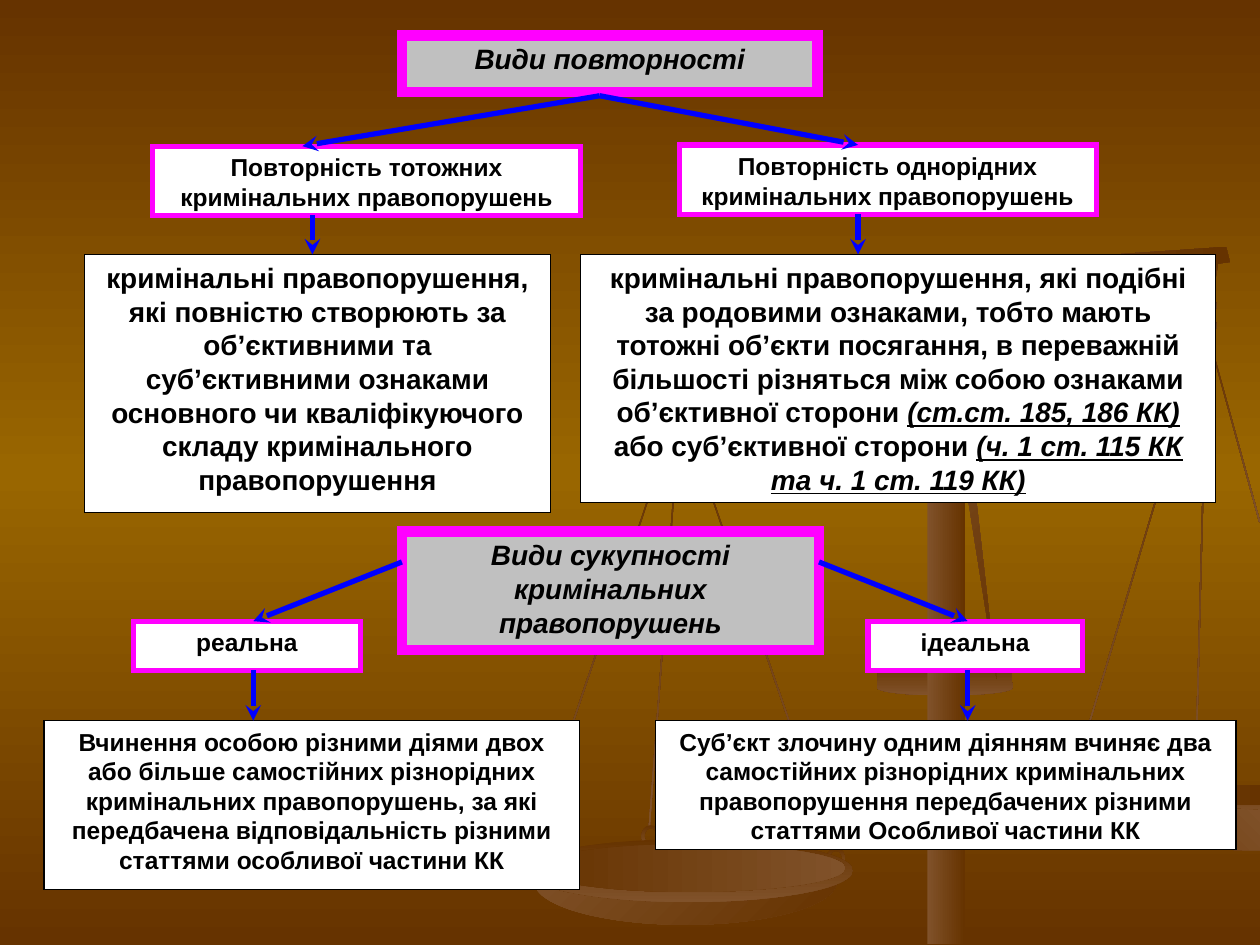
from copy import deepcopy
from dataclasses import dataclass
from math import cos, radians, sin
from lxml.etree import SubElement
from pptx import Presentation
from pptx.dml.color import RGBColor
from pptx.enum.shapes import MSO_CONNECTOR, MSO_SHAPE
from pptx.enum.text import MSO_ANCHOR, PP_ALIGN
from pptx.oxml.ns import qn
from pptx.util import Inches, Pt

BROWN, LIGHT, OCHRE = "663300", "80522A", "996600"
RISING, FALLING = (BROWN, LIGHT), (LIGHT, BROWN)
MAGENTA, BLUE, BLACK, WHITE, GREY = "FF00FF", "0000FF", "000000", "FFFFFF", "C0C0C0"
SLIDE_WIDTH, SLIDE_HEIGHT = 10, 7.5


@dataclass
class Branch:
    kind: str
    kind_place: tuple
    definition: list
    definition_place: tuple
    size: int
    arrow_start: tuple
    arrow_end_x: float
    stem_x: float


HEADINGS = [
    ("Види повторності", (3.19, 0.28, 3.3, 0.45)),
    ("Види сукупності кримінальних правопорушень", (3.19, 4.22, 3.31, 0.94)),
]
BRANCHES = [
    Branch("Повторність тотожних кримінальних правопорушень", (1.21, 1.16, 3.4, 0.55),
           ["кримінальні правопорушення, які повністю створюють за об’єктивними та суб’єктивними "
            "ознаками основного чи кваліфікуючого складу кримінального правопорушення"],
           (0.67, 2.02, 3.7, 2.05), 16, (4.76, 0.76), 2.4, 2.48),
    Branch("Повторність однорідних кримінальних правопорушень", (5.39, 1.15, 3.31, 0.55),
           ["кримінальні правопорушення, які подібні за родовими ознаками, тобто мають тотожні "
            "об’єкти посягання, в переважній більшості різняться між собою ознаками "
            "об’єктивної сторони ", "(ст.ст. 185, 186 КК)", " або суб’єктивної сторони ",
            "(ч. 1 ст. 115 КК та ч. 1 ст. 119 КК)"],
           (4.61, 2.02, 5.04, 1.97), 16, (4.76, 0.76), 6.81, 6.81),
    Branch("реальна", (1.06, 4.93, 1.8, 0.39),
           ["Вчинення особою різними діями двох або більше самостійних різнорідних кримінальних "
            "правопорушень, за які передбачена відповідальність різними статтями особливої "
            "частини КК"],
           (0.35, 5.72, 4.25, 1.34), 14, (3.19, 4.46), 2.01, 2.01),
    Branch("ідеальна", (6.89, 4.93, 1.7, 0.39),
           ["Суб’єкт злочину одним діянням вчиняє два самостійних різнорідних кримінальних "
            "правопорушення передбачених різними статтями Особливої частини КК"],
           (5.2, 5.72, 4.61, 1.02), 14, (6.5, 4.46), 7.68, 7.68),
]


def color(value):
    return RGBColor.from_string(value)


def arc(center_x, center_y, radius_x, radius_y, start, end, steps=16):
    angles = [radians(start + (end - start) * step / steps) for step in range(steps + 1)]
    return [(center_x + radius_x * cos(angle), center_y + radius_y * sin(angle)) for angle in angles]


class SlideBuilder:
    font = "Arial"

    def __init__(self, slide):
        self.slide = slide
        self.scales = None

    def background(self, edge, middle):
        fill = self.slide.background.fill
        fill.gradient()
        fill.gradient_angle = 270
        stop_list = self.slide.element.find(".//" + qn("a:gsLst"))
        stop_list.insert(1, deepcopy(stop_list[0]))
        self.paint_stops(fill, (edge, middle, edge))

    def start_scales(self):
        self.scales = self.slide.shapes.add_group_shape().shapes

    def paint_stops(self, fill, colors):
        for index, (stop, value) in enumerate(zip(fill.gradient_stops, colors)):
            stop.position = index / (len(colors) - 1)
            stop.color.rgb = color(value)

    def shade(self, shape, colors, angle):
        shape.shadow.inherit = False
        shape.line.fill.background()
        shape.fill.gradient()
        shape.fill.gradient_angle = -angle % 360
        self.paint_stops(shape.fill, colors)

    def solid(self, kind, place, colors, angle, rotation=0):
        shape = self.scales.add_shape(kind, *map(Inches, place))
        shape.rotation = rotation
        self.shade(shape, colors, angle)
        return shape

    def string(self, left, top, height, rotation):
        self.solid(MSO_SHAPE.RECTANGLE, (left, top, 0.01, height), RISING, 90, rotation)

    def chain_link(self, left, top):
        link = self.solid(MSO_SHAPE.DONUT, (left, top, 0.15, 0.17), RISING, 90)
        link.adjustments[0] = 0.16

    def outline(self, points, colors, angle):
        corners = [(Inches(x), Inches(y)) for x, y in points]
        builder = self.scales.build_freeform(*corners[0])
        builder.add_line_segments(corners[1:], close=True)
        self.shade(builder.convert_to_shape(), colors, angle)

    def box(self, place, parts, size, fill=WHITE, line=BLACK, width=0.75, italic=False):
        shape = self.slide.shapes.add_shape(MSO_SHAPE.RECTANGLE, *map(Inches, place))
        shape.shadow.inherit = False
        shape.fill.solid()
        shape.fill.fore_color.rgb = color(fill)
        shape.line.color.rgb = color(line)
        shape.line.width = Pt(width)
        SubElement(shape.element.spPr.find(qn("a:ln")), qn("a:miter"), lim="800000")
        frame = shape.text_frame
        frame.word_wrap = True
        frame.vertical_anchor = MSO_ANCHOR.TOP
        paragraph = frame.paragraphs[0]
        paragraph.alignment = PP_ALIGN.CENTER
        for index, part in enumerate(parts):
            citation = index % 2 == 1
            run = paragraph.add_run()
            run.text = part
            run.font.name = self.font
            run.font.size = Pt(size)
            run.font.bold = True
            run.font.italic = italic or citation
            run.font.underline = citation
            run.font.color.rgb = color(BLACK)

    def arrow(self, start, end):
        connector = self.slide.shapes.add_connector(MSO_CONNECTOR.STRAIGHT, *map(Inches, start + end))
        connector.line.color.rgb = color(BLUE)
        connector.line.width = Pt(3)
        properties = connector.element.spPr
        SubElement(properties.find(qn("a:ln")), qn("a:tailEnd"), type="stealth")
        SubElement(properties, qn("a:effectLst"))


def draw_strings(builder):
    right_pan = [(9.04, 2.6, 3.6, 16.6), (9.53, 2.66, 3.47, 1.5), (9.79, 2.64, 1.53, 344.6)]
    left_pan = [(5.98, 3.15, 3.53, 341), (4.79, 3.16, 3.68, 18.6), (5.27, 3.25, 3.31, 4.2)]
    for string in right_pan + left_pan:
        builder.string(*string)


def draw_right_pan(builder):
    edge = SLIDE_WIDTH
    rim = arc(edge, 6.34, 1.73, 0.11, 90, 270)
    bowl = arc(edge, 6.33, 1.69, 0.42, 90, 180) + [(edge, 6.43)]
    inside = arc(edge, 6.31, 1.66, 0.08, 90, 270)
    builder.outline(rim, RISING, 90)
    builder.outline(bowl, RISING, 315)
    builder.outline(inside, FALLING, 0)


def draw_beam(builder):
    hanger = [(9.67, 2.09), (9.5, 2.1), (9.55, 2.36), (9.62, 2.36)]
    beam = [(9.73, 1.96), (9.76, 2.08), (5.25, 2.73), (5.24, 2.64), (7.37, 2.12)]
    builder.outline(hanger, RISING, 90)
    for top in (2.34, 2.5):
        builder.chain_link(9.51, top)
    builder.outline(beam, FALLING, 0)


def draw_left_pan(builder):
    for left, top in [(5.09, 6.55), (6.56, 6.73)]:
        builder.chain_link(left, top)
    builder.solid(MSO_SHAPE.OVAL, (4.24, 6.66, 2.4, 0.68), FALLING, 45)
    builder.solid(MSO_SHAPE.OVAL, (4.16, 6.66, 2.61, 0.5), RISING, 90)
    builder.solid(MSO_SHAPE.OVAL, (4.24, 6.7, 2.47, 0.38), RISING, 0)
    builder.chain_link(6.5, 6.58)


def draw_post(builder):
    brace = [(7.91, 5.39), (7.48, 2.68), (7.6, 2.65)]
    builder.solid(MSO_SHAPE.RECTANGLE, (7.36, 3.08, 0.3, 4.41), FALLING, 0)
    builder.outline(brace, FALLING, 45)


def draw_scales(builder):
    builder.start_scales()
    draw_strings(builder)
    collar = arc(7.5, 5.26, 0.53, 0.05, 180, 0) + arc(7.5, 5.46, 0.54, 0.06, 0, 180)
    builder.outline(collar, RISING, 90)
    draw_right_pan(builder)
    draw_beam(builder)
    draw_left_pan(builder)
    draw_post(builder)


def draw_scheme(builder):
    for text, place in HEADINGS:
        builder.box(place, [text], 16, GREY, MAGENTA, 6, italic=True)
    for branch in BRANCHES:
        builder.box(branch.kind_place, [branch.kind], 14, line=MAGENTA, width=3)
        builder.box(branch.definition_place, branch.definition, branch.size)
    for branch in BRANCHES:
        _, kind_top, _, kind_height = branch.kind_place
        definition_top = branch.definition_place[1]
        builder.arrow(branch.arrow_start, (branch.arrow_end_x, kind_top))
        builder.arrow((branch.stem_x, kind_top + kind_height), (branch.stem_x, definition_top))


def main():
    presentation = Presentation()
    presentation.slide_width, presentation.slide_height = Inches(SLIDE_WIDTH), Inches(SLIDE_HEIGHT)
    builder = SlideBuilder(presentation.slides.add_slide(presentation.slide_layouts[6]))
    builder.background(BROWN, OCHRE)
    draw_scales(builder)
    draw_scheme(builder)
    presentation.save("out.pptx")


if __name__ == "__main__":
    main()
